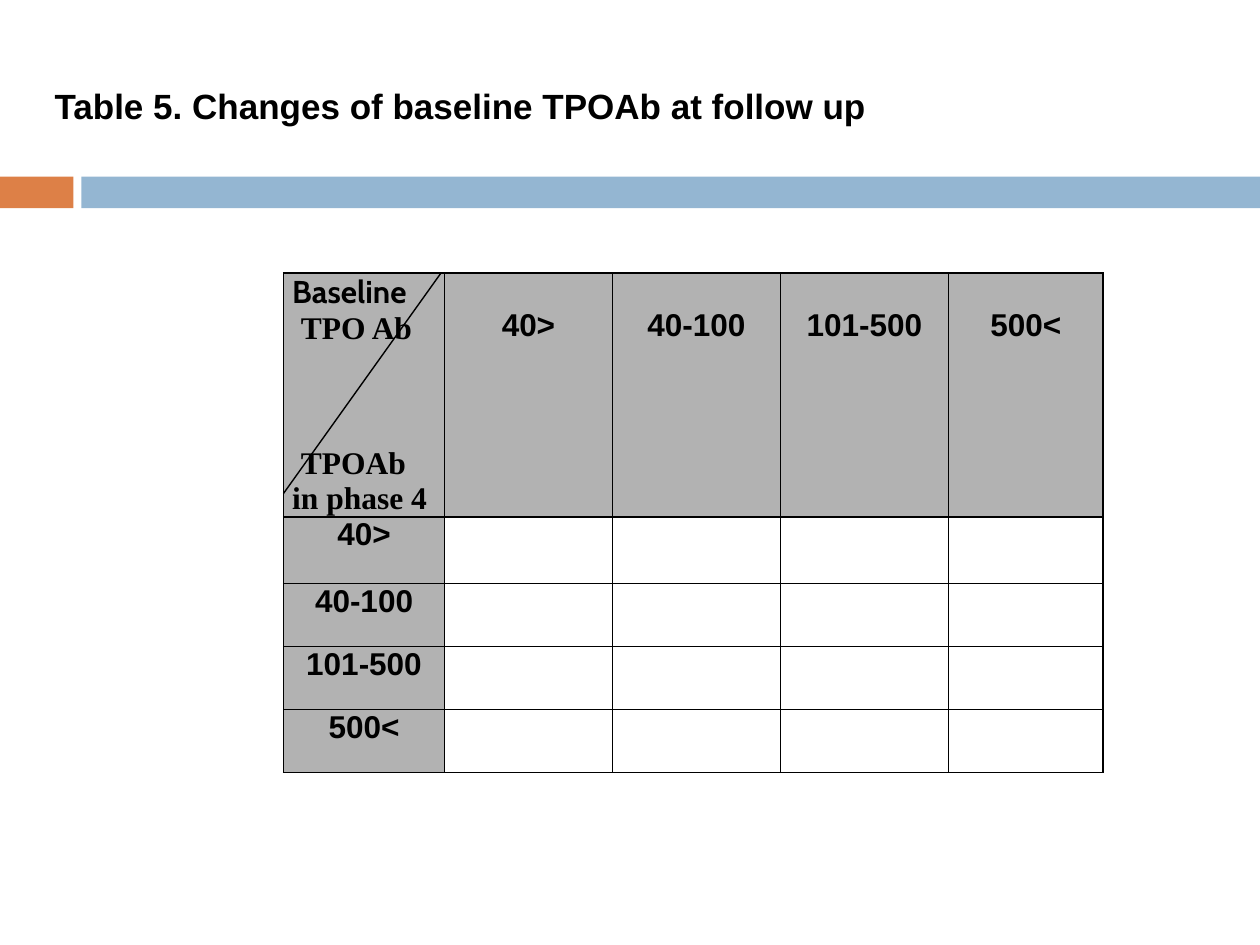
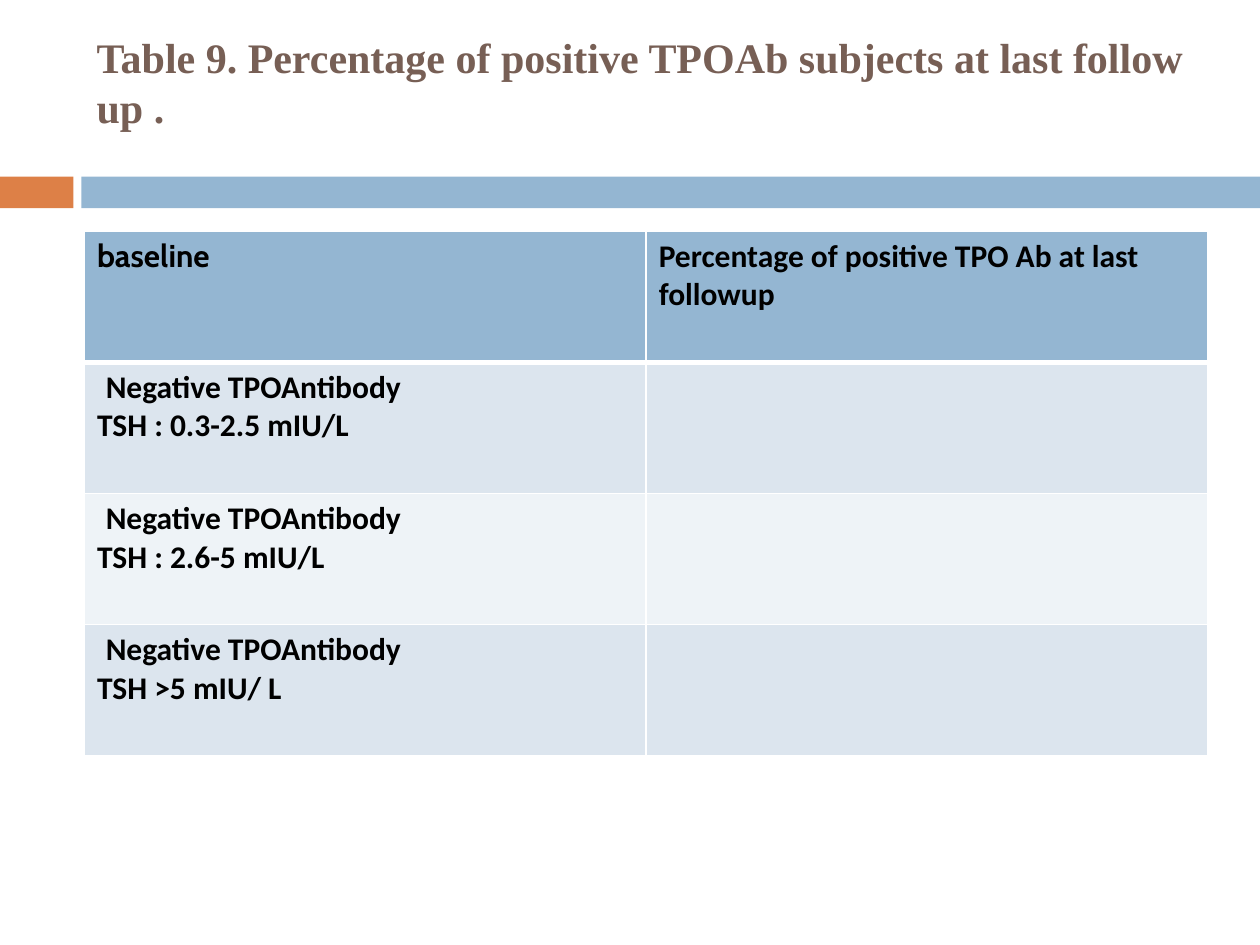
"""Build two slides of TPO antibody follow-up tables."""
from lxml import etree
from pptx import Presentation
from pptx.dml.color import RGBColor
from pptx.enum.shapes import MSO_CONNECTOR, MSO_SHAPE
from pptx.enum.text import MSO_ANCHOR, MSO_AUTO_SIZE, PP_ALIGN
from pptx.oxml.ns import qn
from pptx.util import Pt

RECTANGLE = MSO_SHAPE.RECTANGLE
STRAIGHT = MSO_CONNECTOR.STRAIGHT
TOP, MIDDLE = MSO_ANCHOR.TOP, MSO_ANCHOR.MIDDLE
LEFT, CENTER = PP_ALIGN.LEFT, PP_ALIGN.CENTER
NO_AUTOFIT = MSO_AUTO_SIZE.NONE

COLORS = {
    "orange": "DD8047", "blue": "94B6D2", "brown": "775F55",
    "black": "000000", "white": "FFFFFF", "gray": "B2B2B2",
    "pale": "DCE5EE", "paler": "EEF3F7",
}
SANS, SERIF, HEADING, BODY = "Arial", "Times New Roman", "Cabin", "Calibri"
CELL_SIZE = 18
LEVELS = ["<40", "40-100", "101-500", ">500"]
TSH_GROUPS = ["TSH : 0.3-2.5 mIU/L", "TSH : 2.6-5 mIU/L", "TSH >5 mIU/ L"]


def color(name):
    """Return a palette colour."""
    return RGBColor.from_string(COLORS[name])


def format_runs(paragraph, font, size=CELL_SIZE, ink="black"):
    """Give every run of a paragraph the same bold face."""
    for run in paragraph.runs:
        run.font.name = font
        run.font.size = Pt(size)
        run.font.bold = True
        run.font.color.rgb = color(ink)


def add_layout_bands(layout, slide):
    """Put the two header bands on the shared layout."""
    for left, width, fill in ((0, 42, "orange"), (46.5, 673.5, "blue")):
        band = slide.shapes.add_shape(RECTANGLE, Pt(left), Pt(101), Pt(width), Pt(18))
        band.shadow.inherit = False
        band.fill.solid()
        band.fill.fore_color.rgb = color(fill)
        band.line.fill.background()
        layout.shapes.element.append(band.element)


def set_title(slide, text, box, font, size, ink, anchor, line_spacing=None):
    """Fill and place the title placeholder."""
    title = slide.shapes.title
    title.left, title.top, title.width, title.height = map(Pt, box)
    frame = title.text_frame
    frame.text = text
    frame.word_wrap = True
    frame.auto_size = NO_AUTOFIT
    frame.vertical_anchor = anchor
    heading = frame.paragraphs[0]
    heading.alignment = LEFT
    if line_spacing:
        heading.line_spacing = Pt(line_spacing)
    format_runs(heading, font, size, ink)


def add_grid(slide, left, top, widths, heights):
    """Add a table without banding and return it."""
    frame = slide.shapes.add_table(len(heights), len(widths), Pt(left), Pt(top),
                                   Pt(sum(widths)), Pt(sum(heights)))
    table = frame.table
    table.first_row = table.horz_banding = False
    for column, width in zip(table.columns, widths):
        column.width = Pt(width)
    for row, height in zip(table.rows, heights):
        row.height = Pt(height)
    return table


def style_cell(cell, fill, border, bottom=1):
    """Set the borders and the fill of a cell."""
    properties = cell._tc.get_or_add_tcPr()
    for side, width in (("L", 1), ("R", 1), ("T", 1), ("B", bottom)):
        line = etree.SubElement(properties, qn(f"a:ln{side}"), w=str(Pt(width)))
        solid = etree.SubElement(line, qn("a:solidFill"))
        etree.SubElement(solid, qn("a:srgbClr"), val=COLORS[border])
    if fill:
        cell.fill.solid()
        cell.fill.fore_color.rgb = color(fill)
    else:
        cell.fill.background()


def write_cell(cell, lines):
    """Write (text, font, indent, space before) lines into a cell."""
    cell.text_frame.text = "\n".join(text for text, *_ in lines)
    for paragraph, (_, font, indent, gap) in zip(cell.text_frame.paragraphs, lines):
        paragraph.alignment = LEFT
        paragraph.space_before = Pt(gap)
        paragraph._p.get_or_add_pPr().set("marL", str(Pt(indent)))
        format_runs(paragraph, font)


def tighten(cell, top=0):
    """Use narrow side margins and the given top margin."""
    cell.margin_left = cell.margin_right = Pt(5)
    cell.margin_top, cell.margin_bottom = Pt(top), 0


def write_level(cell, level, top=0):
    """Write a centred right-to-left antibody level."""
    tighten(cell, top)
    cell.text_frame.text = level
    paragraph = cell.text_frame.paragraphs[0]
    paragraph.alignment = CENTER
    paragraph._p.get_or_add_pPr().set("rtl", "1")
    format_runs(paragraph, HEADING)
    for run in paragraph.runs:
        etree.SubElement(run._r.get_or_add_rPr(), qn("a:cs"), typeface=SANS)


def add_diagonal(slide, start, end):
    """Draw the line that splits the corner cell."""
    diagonal = slide.shapes.add_connector(STRAIGHT, *map(Pt, start + end))
    diagonal.line.color.rgb = color("black")
    diagonal.line.width = Pt(0.79)
    etree.SubElement(diagonal.element.spPr, qn("a:effectLst"))


def fill_changes_slide(slide):
    """Build the baseline against phase 4 table."""
    set_title(slide, "Table 5. Changes of baseline TPOAb at follow up",
              (24, 44, 696, 32), SANS, 20, "black", MIDDLE)
    left, top = 162, 156
    table = add_grid(slide, left, top, [92, 96, 96, 96, 88.5], [139.5, 38, 36, 36, 36])
    for row in range(5):
        for column in range(5):
            is_label = row == 0 or column == 0
            style_cell(table.cell(row, column), "gray" if is_label else None, "black")
    corner = table.cell(0, 0)
    tighten(corner)
    write_cell(corner, [("Baseline", HEADING, 0, 0), ("TPO Ab", SERIF, 5, 0),
                        ("TPOAb", SERIF, 5, 57), ("in phase 4", SERIF, 0, 0)])
    for index, level in enumerate(LEVELS, 1):
        write_level(table.cell(0, index), level, top=20)
        write_level(table.cell(index, 0), level)
    add_diagonal(slide, (left, top + 126), (left + 90, top))


def fill_percentage_slide(slide):
    """Build the table of positive subjects by TSH group."""
    set_title(slide, "Table 9. Percentage of positive TPOAb subjects at last follow up .",
              (48, 14, 642, 94), SERIF, 24, "brown", TOP, line_spacing=29)
    table = add_grid(slide, 48.25, 132, [321, 321], [75] * 4)
    for row, fill in enumerate(("blue", "pale", "paler", "pale")):
        for column in range(2):
            style_cell(table.cell(row, column), fill, "white", 1 if row else 3)
    write_cell(table.cell(0, 0), [("baseline", HEADING, 0, 0)])
    write_cell(table.cell(0, 1),
               [("Percentage of positive TPO Ab at last followup", BODY, 0, 0)])
    for row, group in enumerate(TSH_GROUPS, 1):
        write_cell(table.cell(row, 0),
                   [("Negative TPOAntibody", BODY, 5, 0), (group, BODY, 0, 0)])


def main():
    """Create and save the presentation."""
    deck = Presentation()
    deck.slide_width, deck.slide_height = Pt(720), Pt(540)
    layout = deck.slide_layouts.get_by_name("Title Only")
    changes = deck.slides.add_slide(layout)
    add_layout_bands(layout, changes)
    fill_changes_slide(changes)
    fill_percentage_slide(deck.slides.add_slide(layout))
    deck.save("out.pptx")


if __name__ == "__main__":
    main()
